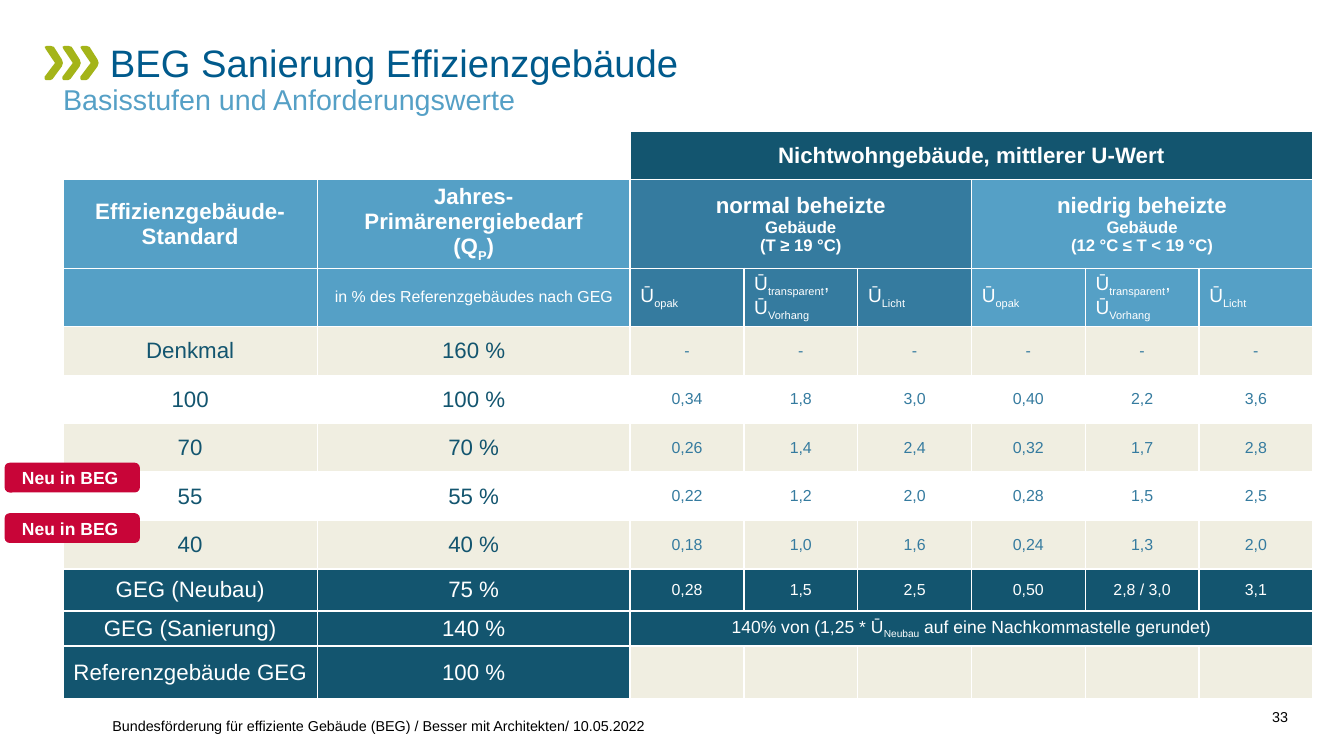
from dataclasses import dataclass
from typing import Any

from lxml import etree
from pptx import Presentation
from pptx.dml.color import RGBColor
from pptx.enum.shapes import MSO_SHAPE
from pptx.enum.text import MSO_ANCHOR, MSO_AUTO_SIZE, PP_ALIGN
from pptx.oxml.ns import qn
from pptx.util import Pt

LEFT, CENTER, RIGHT = PP_ALIGN.LEFT, PP_ALIGN.CENTER, PP_ALIGN.RIGHT
TOP, MIDDLE, BOTTOM = MSO_ANCHOR.TOP, MSO_ANCHOR.MIDDLE, MSO_ANCHOR.BOTTOM
ROUNDED = MSO_SHAPE.ROUNDED_RECTANGLE
NO_AUTOFIT = MSO_AUTO_SIZE.NONE
TITLE_ONLY = 5


@dataclass(frozen=True)
class Theme:
    font: str = "Arial"
    title: str = "005A8C"
    light: str = "55A0C6"
    medium: str = "357B9F"
    dark: str = "13556F"
    sand: str = "F0EEE1"
    white: str = "FFFFFF"
    black: str = "000000"
    badge: str = "C80538"
    chevron: str = "A4B419"
    title_size: float = 24
    subtitle_size: float = 18
    level_size: float = 14
    symbol_size: float = 12
    note_size: float = 11
    small_head_size: float = 10.5
    value_size: float = 10
    footer_size: float = 9


THEME = Theme()


@dataclass(frozen=True)
class Style:
    size: float
    color: str
    bold: bool = False
    align: Any = CENTER


@dataclass(frozen=True)
class Line:
    """One paragraph: ~x~ is subscript, a newline breaks the line."""
    text: str
    style: Style


@dataclass(frozen=True)
class Cell:
    row: int
    column: int
    fill: str
    lines: tuple[Line, ...] = ()
    span: int = 1


@dataclass(frozen=True)
class Label:
    left: float
    top: float
    width: float
    height: float
    line: Line
    margins: tuple[float, float]
    anchor: Any = TOP


HEAD = Style(THEME.level_size, THEME.white, True)
SMALL_HEAD = Style(THEME.small_head_size, THEME.white, True)
UNIT = Style(THEME.value_size, THEME.white)
SYMBOL = Style(THEME.symbol_size, THEME.white, align=LEFT)
NOTE = Style(THEME.note_size, THEME.white)
FOOTER = Style(THEME.footer_size, THEME.black, align=LEFT)

COLUMN_WIDTHS = [159.8, 196.6] + [71.5] * 6
ROW_HEIGHTS = [30.2, 55.6, 36.8] + [30.5] * 5 + [26.4, 22, 33.3]
SYMBOLS = ("Ū~opak~", "Ū~transparent~, Ū~Vorhang~", "Ū~Licht~")
LEVELS = (
    ("Denkmal", "160 %", "-", "-", "-", "-", "-", "-"),
    ("100", "100 %", "0,34", "1,8", "3,0", "0,40", "2,2", "3,6"),
    ("70", "70 %", "0,26", "1,4", "2,4", "0,32", "1,7", "2,8"),
    ("55", "55 %", "0,22", "1,2", "2,0", "0,28", "1,5", "2,5"),
    ("40", "40 %", "0,18", "1,0", "1,6", "0,24", "1,3", "2,0"),
    ("GEG (Neubau)", "75 %", "0,28", "1,5", "2,5", "0,50", "2,8 / 3,0", "3,1"),
    ("GEG (Sanierung)", "140 %"),
    ("Referenzgebäude GEG", "100 %"),
)
FIRST_LEVEL_ROW = 3
FIRST_GEG = 5
# Chevron outline in tenths of a point
CHEVRON = ((14, 0), (0, 7), (7, 22), (65, 108), (0, 194), (0, 209), (7, 216), (36, 216),
           (50, 209), (108, 130), (115, 108), (108, 86), (58, 7), (36, 0))


def set_values(target: Any, values: dict[str, Any]) -> None:
    for name, value in values.items():
        setattr(target, name, value)


def paint(fill: Any, color: str) -> None:
    fill.solid()
    fill.fore_color.rgb = RGBColor.from_string(color)


def write_line(paragraph: Any, line: Line) -> None:
    style = line.style
    paragraph.alignment = style.align
    for part_index, part in enumerate(line.text.split("~")):
        for piece_index, piece in enumerate(part.split("\n")):
            if piece_index:
                paragraph.add_line_break()
            if not piece:
                continue
            run = paragraph.add_run()
            run.text = piece
            set_values(run.font, {"name": THEME.font, "size": Pt(style.size), "bold": style.bold})
            run.font.color.rgb = RGBColor.from_string(style.color)
            if part_index % 2:
                run.font._element.set("baseline", "-25000")


def write_frame(frame: Any, line: Line, margins: tuple[float, float], anchor: Any) -> None:
    side, end = map(Pt, margins)
    set_values(frame, {"word_wrap": True, "auto_size": NO_AUTOFIT, "vertical_anchor": anchor,
                       "margin_left": side, "margin_right": side,
                       "margin_top": end, "margin_bottom": end})
    write_line(frame.paragraphs[0], line)


def add_label(slide: Any, label: Label) -> Any:
    box = slide.shapes.add_textbox(*map(Pt, (label.left, label.top, label.width, label.height)))
    write_frame(box.text_frame, label.line, label.margins, label.anchor)
    return box


def add_badge(slide: Any, label: Label) -> None:
    badge = slide.shapes.add_shape(
        ROUNDED, *map(Pt, (label.left, label.top, label.width, label.height)))
    badge.shadow.inherit = False
    paint(badge.fill, THEME.badge)
    badge.line.fill.background()
    write_frame(badge.text_frame, label.line, label.margins, label.anchor)


def add_chevron(slide: Any, left: float, top: float) -> None:
    builder = slide.shapes.build_freeform(*CHEVRON[0], scale=Pt(0.1))
    builder.add_line_segments(CHEVRON[1:], close=True)
    chevron = builder.convert_to_shape(Pt(left), Pt(top))
    chevron.shadow.inherit = False
    paint(chevron.fill, THEME.chevron)
    chevron.line.fill.background()


def add_borders(cell: Any) -> None:
    properties = cell._tc.get_or_add_tcPr()
    for position, side in enumerate(("lnL", "lnR", "lnT", "lnB")):
        border = etree.Element(qn(f"a:{side}"), w=str(Pt(1)))
        solid = etree.SubElement(border, qn("a:solidFill"))
        etree.SubElement(solid, qn("a:srgbClr"), val=THEME.white)
        properties.insert(position, border)


def table_cells() -> list[Cell]:
    light, medium, dark = THEME.light, THEME.medium, THEME.dark
    cells = [
        Cell(0, 0, THEME.white), Cell(0, 1, THEME.white),
        Cell(0, 2, dark, (Line("Nichtwohngebäude, mittlerer U-Wert", HEAD),), 6),
        Cell(1, 0, light, (Line("Effizienzgebäude-\nStandard", HEAD),)),
        Cell(1, 1, light, (Line("Jahres-", HEAD), Line("Primärenergiebedarf\n(Q~P~)", HEAD))),
        Cell(2, 0, light),
        Cell(2, 1, light, (Line("in % des Referenzgebäudes nach GEG", UNIT),)),
        Cell(9, 2, dark, (Line("140% von (1,25 * Ū~Neubau~ auf eine Nachkommastelle gerundet)", NOTE),), 6),
    ]
    # Heating groups with their three U-value symbols
    for column, fill, group, limits in ((2, medium, "normal", "(T ≥ 19 °C)"),
                                        (5, light, "niedrig", "(12 °C ≤ T < 19 °C)")):
        cells.append(Cell(1, column, fill, (Line(f"{group} beheizte", HEAD),
                                            Line("Gebäude", SMALL_HEAD),
                                            Line(limits, SMALL_HEAD)), 3))
        cells += [Cell(2, column + i, fill, (Line(symbol, SYMBOL),))
                  for i, symbol in enumerate(SYMBOLS)]
    # Efficiency levels in alternating bands, then the GEG rows
    for index, level in enumerate(LEVELS):
        is_geg = index >= FIRST_GEG
        fill = dark if is_geg else (THEME.sand, THEME.white)[index % 2]
        level_style = Style(THEME.level_size, THEME.white if is_geg else dark)
        value_style = Style(THEME.value_size, THEME.white if is_geg else medium)
        cells += [Cell(FIRST_LEVEL_ROW + index, column, fill,
                       (Line(text, level_style if column < 2 else value_style),))
                  for column, text in enumerate(level)]
    return cells + [Cell(10, column, THEME.sand) for column in range(2, 8)]


def add_requirements(slide: Any) -> None:
    table = slide.shapes.add_table(
        len(ROW_HEIGHTS), len(COLUMN_WIDTHS), Pt(39.6), Pt(82.8),
        Pt(sum(COLUMN_WIDTHS)), Pt(sum(ROW_HEIGHTS))).table
    set_values(table, {"first_row": False, "horz_banding": False})
    for column, width in zip(table.columns, COLUMN_WIDTHS):
        column.width = Pt(width)
    for row, height in zip(table.rows, ROW_HEIGHTS):
        row.height = Pt(height)
    for entry in table_cells():
        cell = table.cell(entry.row, entry.column)
        if entry.span > 1:
            cell.merge(table.cell(entry.row, entry.column + entry.span - 1))
        set_values(cell, {"vertical_anchor": MIDDLE, "margin_left": Pt(6.5), "margin_right": Pt(6.5),
                          "margin_top": Pt(3), "margin_bottom": Pt(3)})
        paint(cell.fill, entry.fill)
        add_borders(cell)
        for index, line in enumerate(entry.lines):
            frame = cell.text_frame
            write_line(frame.add_paragraph() if index else frame.paragraphs[0], line)


def main() -> None:
    deck = Presentation()
    set_values(deck, {"slide_width": Pt(844.56), "slide_height": Pt(475.2)})
    slide = deck.slides.add_slide(deck.slide_layouts[TITLE_ONLY])

    # Heading
    for index in range(3):
        add_chevron(slide, 28.1 + 11.2 * index, 28.8)
    title = slide.shapes.title
    set_values(title, {"left": Pt(39.6), "top": Pt(26.6), "width": Pt(776.9), "height": Pt(29.5)})
    write_frame(title.text_frame, Line("BEG Sanierung Effizienzgebäude",
                                       Style(THEME.title_size, THEME.title, align=LEFT)), (0, 0), TOP)
    heading = title.text_frame.paragraphs[0]
    heading.line_spacing = 0.95
    heading._p.get_or_add_pPr().set("indent", str(Pt(29.5)))
    subtitle = add_label(slide, Label(39.6, 53.3, 776.9, 25.9, Line(
        "Basisstufen und Anforderungswerte",
        Style(THEME.subtitle_size, THEME.light, align=LEFT)), (0, 0)))
    subtitle.text_frame.paragraphs[0].line_spacing = 0.95

    add_requirements(slide)

    # Footer and badges
    add_label(slide, Label(70.6, 441.4, 712.8, 20.2, Line(
        "Bundesförderung für effiziente Gebäude (BEG) / Besser mit Architekten/ 10.05.2022",
        FOOTER), (0, 0), BOTTOM))
    badge_style = Style(THEME.note_size, THEME.white, True, LEFT)
    for top in (290.9, 322.6):
        add_badge(slide, Label(2.9, top, 85, 18.7, Line("Neu in BEG", badge_style), (10, 7.2), MIDDLE))
    add_label(slide, Label(787, 441.4, 29.5, 20.2, Line(
        "33", Style(THEME.footer_size, THEME.black, align=RIGHT)), (7.2, 3.6)))

    deck.save("out.pptx")


if __name__ == "__main__":
    main()
